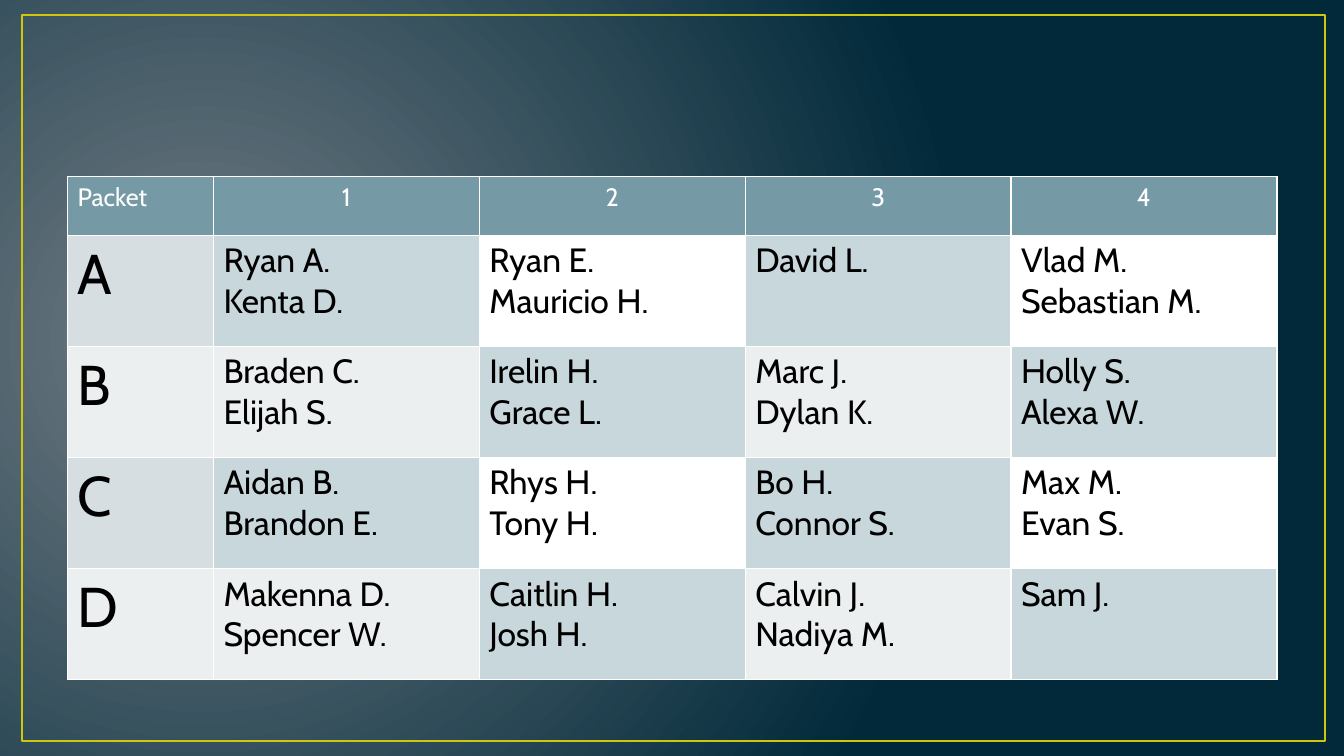
from dataclasses import dataclass

from lxml import etree
from pptx import Presentation
from pptx.dml.color import RGBColor
from pptx.enum.shapes import MSO_SHAPE
from pptx.enum.text import PP_ALIGN
from pptx.oxml.ns import qn
from pptx.util import Cm, Pt

RECTANGLE = MSO_SHAPE.RECTANGLE
LEFT, CENTER = PP_ALIGN.LEFT, PP_ALIGN.CENTER


@dataclass(frozen=True)
class Theme:
    font: str = "Cabin"
    header_size: int = 18
    packet_size: int = 40
    name_size: int = 24
    glow: str = "717C84"
    night: str = "01293A"
    frame: str = "CFC60D"
    header: str = "759AA5"
    check: str = "C8D7DB"
    odd_packet: str = "D6DEE1"
    even_row: str = "ECEFF0"
    white: str = "FFFFFF"
    black: str = "000000"


class SlideBuilder:
    def __init__(self, prs, theme):
        self.theme = theme
        self.s = prs.slides.add_slide(prs.slide_layouts[6])

    def background(self):
        fill = self.s.background.fill
        fill.gradient()
        for stop, color in zip(fill.gradient_stops, (self.theme.glow, self.theme.night)):
            stop.color.rgb = RGBColor.from_string(color)
        # Turn the linear gradient into a circular one
        lin = next(self.s.element.iter(qn("a:lin")))
        grad = lin.getparent()
        grad.remove(lin)
        circle = etree.SubElement(grad, qn("a:path"), {"path": "circle"})
        etree.SubElement(circle, qn("a:fillToRect"),
                         {"l": "15000", "t": "50000", "r": "85000", "b": "60000"})

    def frame(self, left, top, width, height):
        sp = self.s.shapes.add_shape(RECTANGLE, Cm(left), Cm(top), Cm(width), Cm(height))
        sp.shadow.inherit = False
        sp.fill.background()
        sp.line.color.rgb = RGBColor.from_string(self.theme.frame)
        sp.line.width = Pt(1.5)

    def table(self, left, top, col_widths, row_heights, rows):
        table = self.s.shapes.add_table(
            len(rows), len(col_widths), Cm(left), Cm(top),
            Cm(sum(col_widths)), Cm(sum(row_heights))).table
        table.first_row = table.horz_banding = False
        for col, width in zip(table.columns, col_widths):
            col.width = Cm(width)
        for row, height in zip(table.rows, row_heights):
            row.height = Cm(height)
        for r, row in enumerate(rows):
            for c, text in enumerate(row):
                self.cell(table.cell(r, c), r, c, text)

    def cell(self, cell, row, col, text):
        t = self.theme
        size = t.header_size if row == 0 else t.packet_size if col == 0 else t.name_size
        cell.fill.solid()
        cell.fill.fore_color.rgb = RGBColor.from_string(self.cell_color(row, col))
        self.borders(cell)
        tf = cell.text_frame
        for i, line in enumerate(text.split("\n")):
            p = tf.add_paragraph() if i else tf.paragraphs[0]
            p.alignment = CENTER if row == 0 and col else LEFT
            r = p.add_run()
            r.text = line
            r.font.name = t.font
            r.font.size = Pt(size)
            r.font.color.rgb = RGBColor.from_string(t.black if row else t.white)

    def cell_color(self, row, col):
        t = self.theme
        if row == 0:
            return t.header
        if col and (row + col) % 2 == 0:
            return t.check
        if row % 2 == 0:
            return t.even_row
        return t.white if col else t.odd_packet

    def borders(self, cell):
        tc_pr = cell._tc.get_or_add_tcPr()
        for i, side in enumerate(("a:lnL", "a:lnR", "a:lnT", "a:lnB")):
            ln = etree.Element(qn(side), {"w": str(Pt(1))})
            fill = etree.SubElement(ln, qn("a:solidFill"))
            etree.SubElement(fill, qn("a:srgbClr"), {"val": self.theme.white})
            tc_pr.insert(i, ln)


PACKETS = [
    ["Packet", "1", "2", "3", "4"],
    ["A", "Ryan A.\nKenta D.", "Ryan E.\nMauricio H.", "David L.", "Vlad M.\nSebastian M."],
    ["B", "Braden C.\nElijah S.", "Irelin H.\nGrace L.", "Marc J.\nDylan K.", "Holly S.\nAlexa W."],
    ["C", "Aidan B.\nBrandon E.", "Rhys H.\nTony H.", "Bo H.\nConnor S.", "Max M.\nEvan S."],
    ["D", "Makenna D.\nSpencer W.", "Caitlin H.\nJosh H.", "Calvin J.\nNadiya M.", "Sam J."],
]


def main():
    prs = Presentation()
    prs.slide_width, prs.slide_height = Cm(33.87), Cm(19.05)
    slide = SlideBuilder(prs, Theme())

    # Backdrop and border line
    slide.background()
    slide.frame(0.55, 0.37, 32.85, 18.3)

    # Packet assignments
    slide.table(1.7, 4.45, [3.68] + [6.7] * 4, [1.48] + [2.8] * 4, PACKETS)

    prs.save("out.pptx")


if __name__ == "__main__":
    main()
